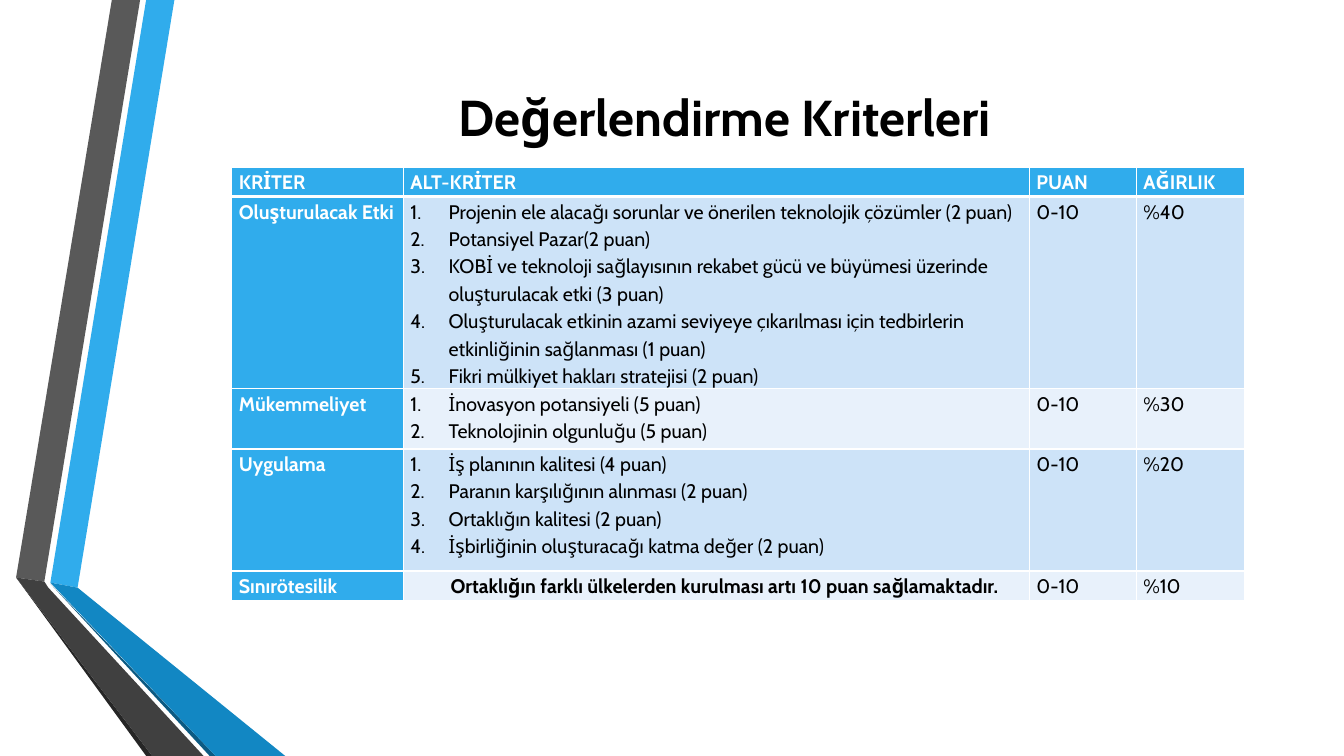
"""Build a slide with a table of evaluation criteria."""
import pptx
import pptx.util
import pptx.oxml
import pptx.oxml.ns
import pptx.dml.color
import pptx.enum.text
from pptx.util import Inches, Pt

FONT = "Cabin"
BLUE = "30ACEC"
BANDS = ("CDE3F8", "E8F1FB")
WIDTHS = (1.7, 6.21, 1.06, 1.07)
HEIGHTS = (0.29, 1.8, 0.6, 1.21, 0.29)
HEADS = ("KRİTER", "ALT-KRİTER", "PUAN", "AĞIRLIK")
ROWS = (
    ("Oluşturulacak Etki", (
        "Projenin ele alacağı sorunlar ve önerilen teknolojik çözümler (2 puan)",
        "Potansiyel Pazar(2 puan)",
        "KOBİ ve teknoloji sağlayısının rekabet gücü ve büyümesi üzerinde "
        "oluşturulacak etki (3 puan)",
        "Oluşturulacak etkinin azami seviyeye çıkarılması için tedbirlerin "
        "etkinliğinin sağlanması (1 puan)",
        "Fikri mülkiyet hakları stratejisi (2 puan)"), "%40"),
    ("Mükemmeliyet", (
        "İnovasyon potansiyeli (5 puan)",
        "Teknolojinin olgunluğu (5 puan)"), "%30"),
    ("Uygulama", (
        "İş planının kalitesi (4 puan)",
        "Paranın karşılığının alınması (2 puan)",
        "Ortaklığın kalitesi (2 puan)",
        "İşbirliğinin oluşturacağı katma değer (2 puan)"), "%20"),
    ("Sınırötesilik", (
        "Ortaklığın farklı ülkelerden kurulması artı 10 puan sağlamaktadır.",),
        "%10"),
)
BARS = (
    (BLUE, ((0.5, 5.78), (0.77, 5.83), (1.73, 0), (1.45, 0))),
    ("595959", ((1.39, 0), (1.11, 0), (0.16, 5.73), (0.44, 5.77))),
    ("262626", ((0.16, 5.73), (1.45, 7.5), (1.51, 7.5))),
    ("0C5A82", ((0.5, 5.79), (2.08, 7.5), (2.14, 7.5))),
    ("1287C3", ((0.5, 5.78), (2.14, 7.5), (2.83, 7.5), (0.77, 5.83))),
    ("404040", ((2.02, 7.5), (0.48, 5.83), (0.44, 5.77), (0.16, 5.73),
                (1.51, 7.5))),
)


def paint(fill, hue):
    fill.solid()
    fill.fore_color.rgb = pptx.dml.color.RGBColor.from_string(hue)


def add_run(para, text, size, hue, bold):
    run = para.add_run()
    run.text = text
    run.font.name = FONT
    run.font.size = Pt(size)
    run.font.bold = bold
    paint(run.font.fill, hue)


def add_bar(slide, hue, spots):
    points = [(Inches(x), Inches(y)) for x, y in spots]
    form = slide.shapes.build_freeform(*points[0])
    form.add_line_segments(points[1:])
    bar = form.convert_to_shape()
    bar.shadow.inherit = False
    paint(bar.fill, hue)
    bar.line.fill.background()


def add_title(slide, text):
    title = slide.shapes.title
    title.left, title.top = Inches(1.71), Inches(0.19)
    title.width, title.height = Inches(10.96), Inches(1.92)
    frame = title.text_frame
    frame.word_wrap = True
    frame.auto_size = pptx.enum.text.MSO_AUTO_SIZE.NONE
    frame.vertical_anchor = pptx.enum.text.MSO_ANCHOR.MIDDLE
    para = frame.paragraphs[0]
    para.alignment = pptx.enum.text.PP_ALIGN.CENTER
    add_run(para, text, 36, "000000", True)


def set_edge(cell, side, width):
    space = pptx.oxml.ns.nsdecls("a")
    edge = pptx.oxml.parse_xml(
        f'<a:ln{side} {space} w="{Pt(width)}"><a:solidFill>'
        f'<a:srgbClr val="FFFFFF"/></a:solidFill></a:ln{side}>')
    cell._tc.get_or_add_tcPr().append(edge)


def indent(para, left, number):
    props = para._p.get_or_add_pPr()
    props.set("marL", str(Inches(left)))
    if number:
        props.set("indent", str(-Inches(left)))
        space = pptx.oxml.ns.nsdecls("a")
        props.append(pptx.oxml.parse_xml(
            f'<a:buAutoNum {space} type="arabicPeriod"/>'))


def fill_cell(cell, lines, back, hue, bold, edges):
    cell.margin_left = cell.margin_right = Inches(0.07)
    cell.margin_top = cell.margin_bottom = 0
    for side, width in zip("LRTB", edges):
        set_edge(cell, side, width)
    paint(cell.fill, back)
    frame = cell.text_frame
    for k, line in enumerate(lines):
        para = frame.add_paragraph() if k else frame.paragraphs[0]
        para.line_spacing = 1.15
        add_run(para, line, 14, hue, bold)
    return frame.paragraphs


def add_grid(slide):
    frame = slide.shapes.add_table(
        len(HEIGHTS), len(WIDTHS), Inches(2.3), Inches(1.66),
        Inches(sum(WIDTHS)), Inches(sum(HEIGHTS)))
    table = frame.table
    table.horz_banding = False
    for col, width in zip(table.columns, WIDTHS):
        col.width = Inches(width)
    for row, height in zip(table.rows, HEIGHTS):
        row.height = Inches(height)
    for c, head in enumerate(HEADS):
        fill_cell(table.cell(0, c), [head], BLUE, "FFFFFF", True, (1, 1, 1, 3))
    for r, (name, parts, weight) in enumerate(ROWS, 1):
        edges = (1, 1, 3 if r == 1 else 1, 1)
        band = BANDS[(r - 1) % 2]
        many = len(parts) > 1
        fill_cell(table.cell(r, 0), [name], BLUE, "FFFFFF", True, edges)
        paras = fill_cell(table.cell(r, 1), parts, band, "000000",
                          not many, edges)
        for para in paras:
            indent(para, 0.38 if many else 0.4, many)
        for c, text in ((2, "0-10"), (3, weight)):
            fill_cell(table.cell(r, c), [text], band, "000000", False, edges)


def main():
    deck = pptx.Presentation()
    deck.slide_width, deck.slide_height = Inches(13.33), Inches(7.5)
    slide = deck.slides.add_slide(deck.slide_layouts.get_by_name("Title Only"))
    for hue, spots in BARS:
        add_bar(slide, hue, spots)
    add_title(slide, "Değerlendirme Kriterleri")
    add_grid(slide)
    deck.save("out.pptx")


if __name__ == "__main__":
    main()
